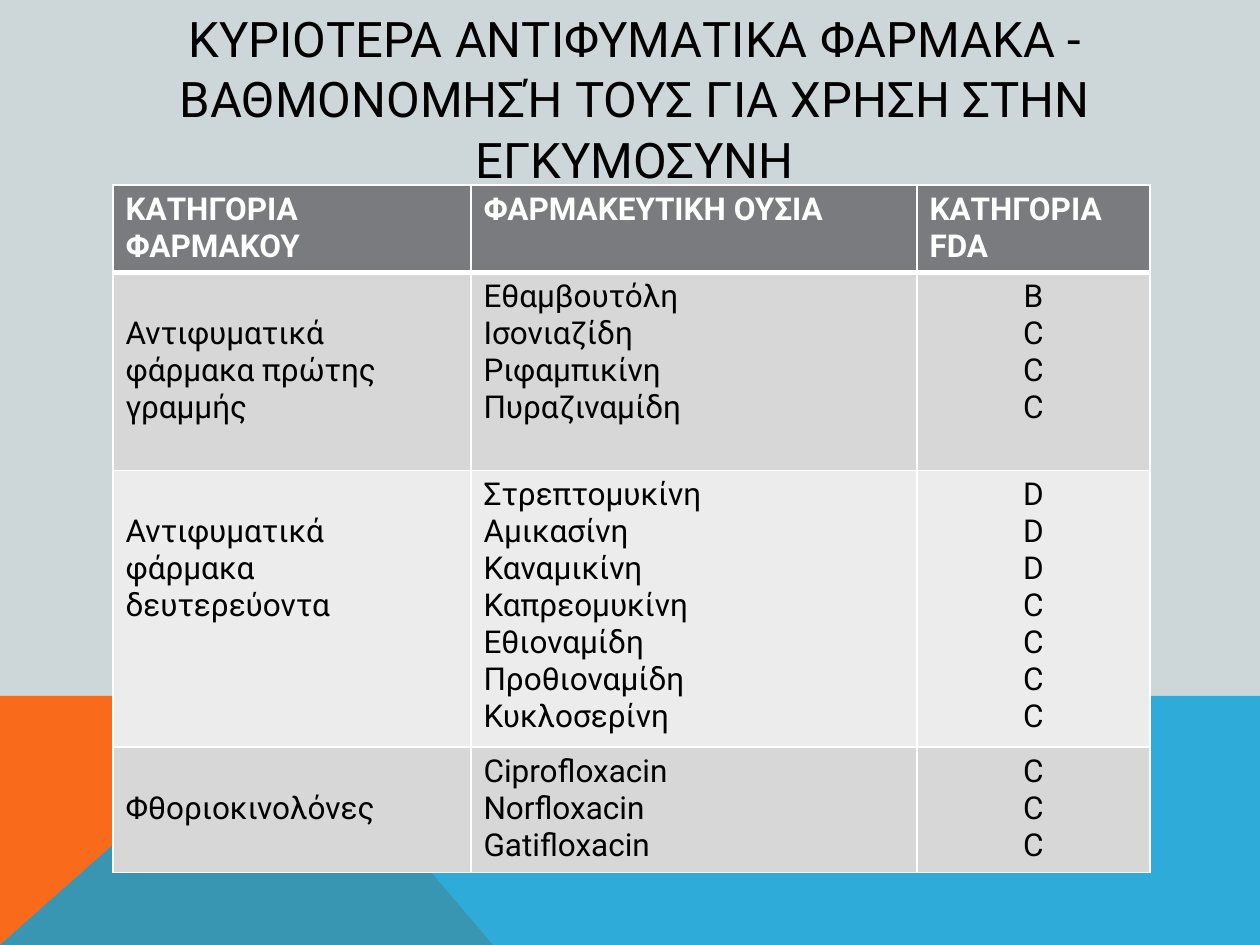
from lxml.etree import SubElement
from pptx import Presentation
from pptx.dml.color import RGBColor
from pptx.enum.text import MSO_ANCHOR, PP_ALIGN
from pptx.oxml.ns import qn
from pptx.util import Pt

HUES = {
    "back": "CDD7D9", "orange": "F96A1B", "blue": "08A1D9",
    "head": "797B7E", "dark": "D7D7D8", "light": "ECECEC",
    "white": "FFFFFF", "black": "000000",
}
FONT = "Roboto"
TITLE = "ΚΥΡΙΟΤΕΡΑ ΑΝΤΙΦΥΜΑΤΙΚΑ ΦΑΡΜΑΚΑ - ΒΑΘΜΟΝΟΜΗΣΉ ΤΟΥΣ ΓΙΑ ΧΡΗΣΗ ΣΤΗΝ ΕΓΚΥΜΟΣΥΝΗ"
HEADS = ["ΚΑΤΗΓΟΡΙΑ ΦΑΡΜΑΚΟΥ", "ΦΑΡΜΑΚΕΥΤΙΚΗ ΟΥΣΙΑ", "ΚΑΤΗΓΟΡΙΑ FDA"]
GROUPS = [
    (["Αντιφυματικά φάρμακα πρώτης γραμμής"],
     ["Εθαμβουτόλη", "Ισονιαζίδη", "Ριφαμπικίνη", "Πυραζιναμίδη"], "BCCC"),
    (["Αντιφυματικά φάρμακα", "δευτερεύοντα"],
     ["Στρεπτομυκίνη", "Αμικασίνη", "Καναμικίνη", "Καπρεομυκίνη",
      "Εθιοναμίδη", "Προθιοναμίδη", "Κυκλοσερίνη"], "DDDCCCC"),
    (["Φθοριοκινολόνες"],
     ["Ciprofloxacin", "Norfloxacin", "Gatifloxacin"], "CCC"),
]
COLS = [358, 446, 233]
ROWS = [86, 198, 271, 124]
SHAPES = [
    ([(0, 945), (0, 696), (281, 696), (493, 945)], "orange", 100),
    ([(0, 945), (281, 696), (1260, 696), (1260, 945)], "blue", 80),
]
LINE, PAD = 37, 6


def px(n):
    return round(n * 914400 / 126)


def hue(name):
    return RGBColor.from_string(HUES[name])


def paint(fill, name):
    fill.solid()
    fill.fore_color.rgb = hue(name)


def write(frame, lines, size, color, bold=False, align=PP_ALIGN.LEFT):
    for i, line in enumerate(lines):
        para = frame.add_paragraph() if i else frame.paragraphs[0]
        para.text = line
        para.alignment = align
        font = para.font
        font.name, font.size, font.bold = FONT, Pt(size), bold
        font.color.rgb = hue(color)


def edge(cell, top):
    props = cell._tc.get_or_add_tcPr()
    for side in "LRTB":
        thick = 3 if top and side == "B" else 1
        line = SubElement(props, qn(f"a:ln{side}"), w=str(Pt(thick)))
        solid = SubElement(line, qn("a:solidFill"))
        SubElement(solid, qn("a:srgbClr"), val=HUES["white"])


def draw(slide, points, color, alpha):
    path = slide.shapes.build_freeform(*points[0], scale=px(1000) / 1000)
    path.add_line_segments(points[1:], close=True)
    shape = path.convert_to_shape()
    shape.shadow.inherit = False
    shape.line.fill.background()
    paint(shape.fill, color)
    if alpha < 100:
        tint = shape._element.spPr.find(qn("a:solidFill"))[0]
        SubElement(tint, qn("a:alpha"), val=str(alpha * 1000))


def grid(slide):
    table = slide.shapes.add_table(
        len(ROWS), len(COLS), px(113), px(185), px(sum(COLS)), px(sum(ROWS))).table
    for col, wide in zip(table.columns, COLS):
        col.width = px(wide)
    for row, high in zip(table.rows, ROWS):
        row.height = px(high)
    for r, row in enumerate([[[h] for h in HEADS], *GROUPS]):
        for c, lines in enumerate(row):
            cell = table.cell(r, c)
            top = r == 0
            gap = LINE if r and c == 0 else 0
            cell.margin_top, cell.margin_bottom = px(PAD + gap), px(PAD)
            edge(cell, top)
            paint(cell.fill, "head" if top else "dark" if r % 2 else "light")
            align = PP_ALIGN.CENTER if r and c == 2 else PP_ALIGN.LEFT
            write(cell.text_frame, lines, 18, "white" if top else "black", top, align)


def main():
    deck = Presentation()
    deck.slide_width, deck.slide_height = px(1260), px(945)
    slide = deck.slides.add_slide(deck.slide_layouts[6])
    paint(slide.background.fill, "back")
    for item in SHAPES:
        draw(slide, *item)
    frame = slide.shapes.add_textbox(px(44), px(50), px(1181), px(95)).text_frame
    frame.word_wrap = True
    frame.vertical_anchor = MSO_ANCHOR.MIDDLE
    write(frame, [TITLE], 28, "black", align=PP_ALIGN.CENTER)
    frame.paragraphs[0].line_spacing = 1.03
    grid(slide)
    deck.save("out.pptx")


if __name__ == "__main__":
    main()
